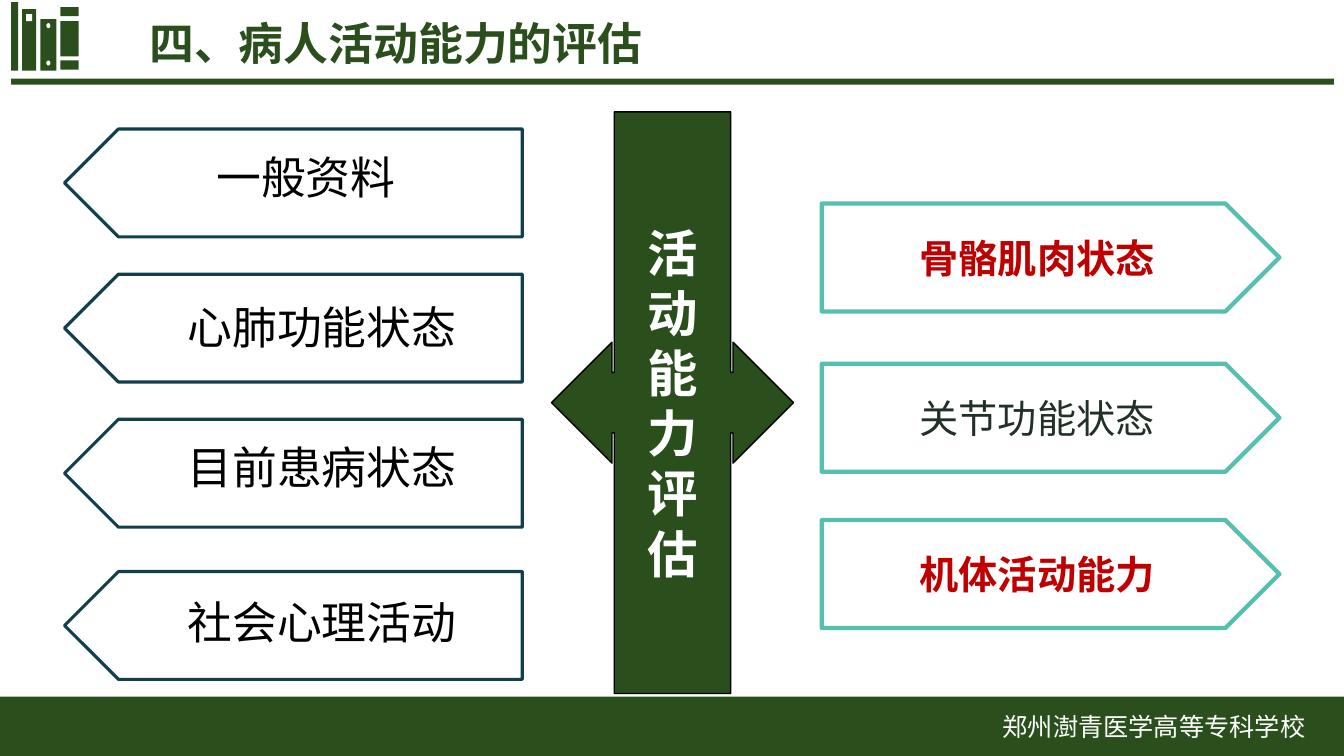
from dataclasses import dataclass

import pptx
import pptx.dml.color
import pptx.enum.shapes
import pptx.enum.text
import pptx.oxml
import pptx.oxml.ns
import pptx.util

SCALE = 9144
SHAPE = pptx.enum.shapes.MSO_SHAPE
ALIGN = pptx.enum.text.PP_ALIGN


@dataclass(frozen=True)
class Theme:
    green: str = "2A4F1C"
    navy: str = "113F4E"
    teal: str = "55C0AF"
    red: str = "C00000"
    ink: str = "223028"
    black: str = "000000"
    white: str = "FFFFFF"
    latin: str = "Arial"
    chinese: str = "Noto Sans CJK SC"
    callout_size: int = 36
    callout_leading: int = 43
    large_size: int = 32
    plate_size: int = 28
    footer_size: int = 18


@dataclass(frozen=True)
class Area:
    left: int
    top: int
    width: int
    height: int

    def emu(self) -> tuple[int, ...]:
        return tuple(
            length * SCALE
            for length in (self.left, self.top, self.width, self.height)
        )


@dataclass(frozen=True)
class Style:
    size: int
    color: str
    bold: bool = False
    font: str = Theme.latin
    align: ALIGN = ALIGN.CENTER


@dataclass(frozen=True)
class LeftItem:
    text: str
    plate_top: int
    text_left: int
    text_top: int


@dataclass(frozen=True)
class RightItem:
    text: str
    top: int
    color: str
    bold: bool


THEME = Theme()
PLATE_WIDTH, PLATE_HEIGHT = 454, 107

GREEN_BLOCKS = (
    Area(11, 78, 1312, 6),
    Area(11, 2, 7, 68),
    Area(60, 60, 18, 9),
    Area(60, 21, 18, 35),
    Area(60, 7, 18, 9),
    Area(40, 19, 16, 51),
    Area(22, 9, 14, 61),
    Area(0, 691, 1333, 59),
)
BOOK_MARKS = (
    (SHAPE.OVAL, Area(46, 23, 4, 5)),
    (SHAPE.OVAL, Area(46, 60, 4, 5)),
    (SHAPE.RECTANGLE, Area(26, 14, 6, 7)),
)
LEFT_ITEMS = (
    LeftItem("一般资料", 128, 105, 143),
    LeftItem("心肺功能状态", 272, 121, 292),
    LeftItem("目前患病状态", 416, 121, 431),
    LeftItem("社会心理活动", 567, 121, 585),
)
RIGHT_ITEMS = (
    RightItem("骨骼肌肉状态", 202, THEME.red, True),
    RightItem("关节功能状态", 361, THEME.ink, False),
    RightItem("机体活动能力", 516, THEME.red, True),
)


def rgb(value: str) -> pptx.dml.color.RGBColor:
    return pptx.dml.color.RGBColor.from_string(value)


def write(box, text: str, style: Style) -> None:
    frame = box.text_frame
    frame.text = text
    frame.word_wrap = True
    frame.auto_size = pptx.enum.text.MSO_AUTO_SIZE.NONE
    frame.vertical_anchor = pptx.enum.text.MSO_ANCHOR.MIDDLE
    para = frame.paragraphs[0]
    para.alignment = style.align
    font = para.runs[0].font
    font.size = pptx.util.Pt(style.size)
    font.bold = style.bold
    font.name = style.font
    font.color.rgb = rgb(style.color)
    latin = para.runs[0]._r.rPr.find(pptx.oxml.ns.qn("a:latin"))
    east_asian = pptx.oxml.parse_xml(
        f'<a:ea {pptx.oxml.ns.nsdecls("a")} typeface="{THEME.chinese}"/>'
    )
    latin.addnext(east_asian)


def add_text(page, area: Area, text: str, style: Style) -> None:
    write(page.shapes.add_textbox(*area.emu()), text, style)


def add_shape(page, kind: SHAPE, area: Area, fill: str = "",
              line: str = "", weight: float = 1):
    shape = page.shapes.add_shape(kind, *area.emu())
    shape.shadow.inherit = False
    if fill:
        shape.fill.solid()
        shape.fill.fore_color.rgb = rgb(fill)
    else:
        shape.fill.background()
    if line:
        shape.line.color.rgb = rgb(line)
        shape.line.width = pptx.util.Pt(weight)
    else:
        shape.line.fill.background()
    return shape


def add_frame(page) -> None:
    for area in GREEN_BLOCKS:
        add_shape(page, SHAPE.RECTANGLE, area, THEME.green)
    for kind, area in BOOK_MARKS:
        add_shape(page, kind, area, THEME.white)
    title = page.shapes.title
    title.left, title.top, title.width, title.height = Area(138, 11, 853, 63).emu()
    write(title, "四、病人活动能力的评估",
          Style(THEME.large_size, THEME.green, True, THEME.chinese, ALIGN.LEFT))
    add_text(page, Area(955, 698, 379, 46), "郑州澍青医学高等专科学校",
             Style(THEME.footer_size, THEME.white, font=THEME.chinese))


def add_left_item(page, item: LeftItem) -> None:
    area = Area(64, item.plate_top, PLATE_WIDTH, PLATE_HEIGHT)
    plate = add_shape(page, SHAPE.PENTAGON, area, line=THEME.navy, weight=2.25)
    plate.rotation = 180
    add_text(page, Area(item.text_left, item.text_top, 397, 64), item.text,
             Style(THEME.large_size, THEME.black))


def add_right_item(page, item: RightItem) -> None:
    area = Area(815, item.top, PLATE_WIDTH, PLATE_HEIGHT)
    plate = add_shape(page, SHAPE.PENTAGON, area, line=THEME.teal, weight=3)
    write(plate, item.text, Style(THEME.plate_size, item.color, item.bold))


def add_callout(page) -> None:
    callout = add_shape(page, SHAPE.LEFT_RIGHT_ARROW_CALLOUT,
                        Area(547, 111, 240, 577), THEME.green, THEME.black)
    write(callout, "活动能力评估", Style(THEME.callout_size, THEME.white, True))
    para = callout.text_frame.paragraphs[0]
    para.line_spacing = pptx.util.Pt(THEME.callout_leading)


def main() -> None:
    deck = pptx.Presentation()
    deck.slide_width, deck.slide_height = 1333 * SCALE, 750 * SCALE
    page = deck.slides.add_slide(deck.slide_layouts.get_by_name("Title Only"))
    add_frame(page)
    for item in LEFT_ITEMS:
        add_left_item(page, item)
    add_callout(page)
    for item in RIGHT_ITEMS:
        add_right_item(page, item)
    deck.save("out.pptx")


if __name__ == "__main__":
    main()
